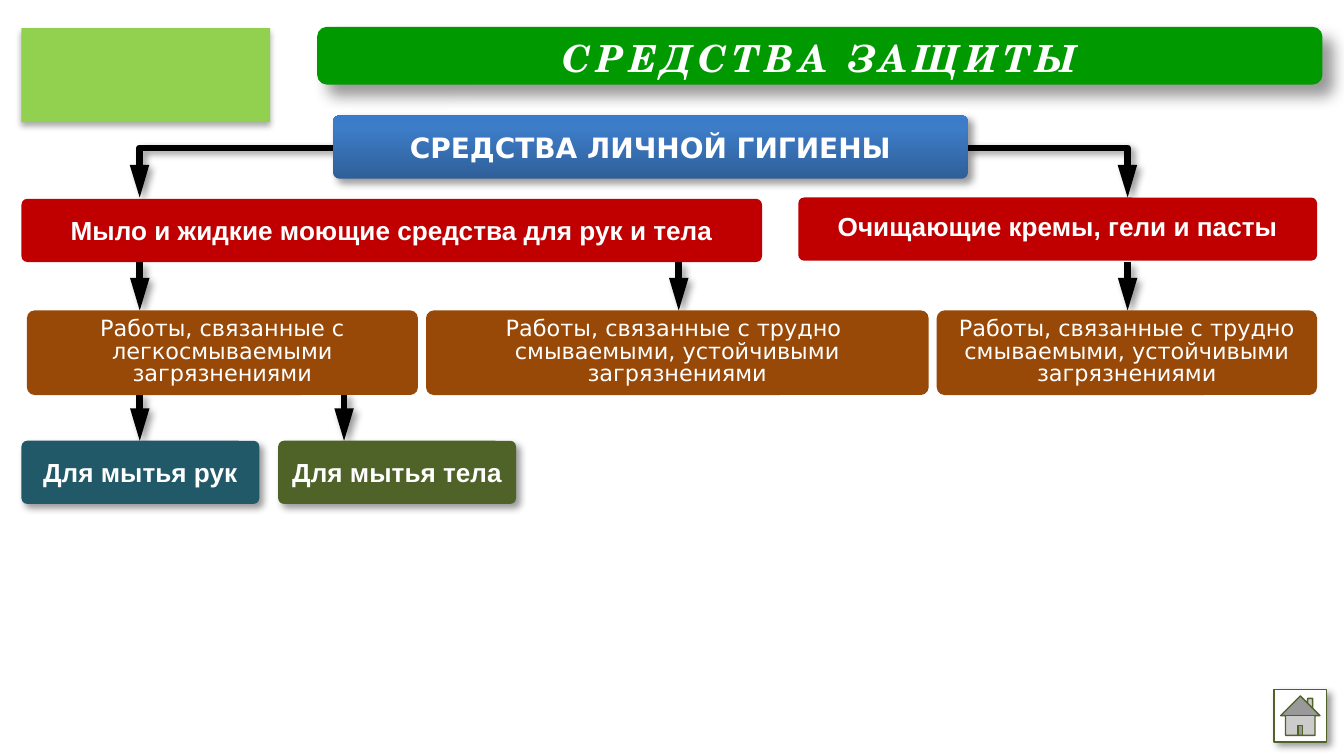
from copy import deepcopy

from lxml.etree import SubElement
from pptx import Presentation
from pptx.dml.color import RGBColor
from pptx.enum.shapes import MSO_CONNECTOR, MSO_SHAPE
from pptx.enum.text import MSO_ANCHOR, PP_ALIGN
from pptx.oxml.ns import qn
from pptx.util import Inches, Pt

COLORS = {
    "black": "000000",
    "white": "FFFFFF",
    "title": "009900",
    "accent": "92D050",
    "group": "C00000",
    "work": "984807",
    "hands": "215968",
    "body": "4F6228",
}
HEADER_GRADIENT = [(0, "2F5F99"), (0.8, "3D7CC7"), (1, "3A7CCB")]

# Shadows: blur and distance in points, angle in degrees, opacity in percent
SOFT = (4, 3, 45, 40)
DEEP = (8, 8, 45, 40)
LOW = (3.5, 2.2, 90, 32)


class SlideBuilder:
    """Holds the slide and draws its elements in one style."""

    def __init__(self, slide):
        self.slide = slide

    def color(self, name):
        return RGBColor.from_string(COLORS[name])

    def add_shadow(self, effects, blur, distance, angle, opacity):
        shadow = SubElement(effects, qn("a:outerShdw"), blurRad=str(Pt(blur)),
                            dist=str(Pt(distance)), dir=str(angle * 60000),
                            algn="tl", rotWithShape="0")
        color = SubElement(shadow, qn("a:srgbClr"), val=COLORS["black"])
        SubElement(color, qn("a:alpha"), val=str(opacity * 1000))

    def arrow(self, start, end, bend=None):
        kind = MSO_CONNECTOR.ELBOW if bend else MSO_CONNECTOR.STRAIGHT
        points = [Inches(value) for value in (*start, *end)]
        connector = self.slide.shapes.add_connector(kind, *points)
        connector.line.width = Pt(3.5)
        connector.line.color.rgb = self.color("black")
        properties = connector._element.spPr
        line = properties.find(qn("a:ln"))
        SubElement(line, qn("a:tailEnd"), type="triangle", w="med", len="lg")
        self.add_shadow(SubElement(properties, qn("a:effectLst")), *SOFT)
        if bend:
            guides = properties.find(qn("a:prstGeom")).get_or_add_avLst()
            SubElement(guides, qn("a:gd"), name="adj1", fmla=f"val {bend}")

    def shape(self, kind, box, fill, shadow=None, outline=None):
        shape = self.slide.shapes.add_shape(kind, *[Inches(value) for value in box])
        shape.shadow.inherit = False
        if shadow:
            effects = shape._element.spPr.find(qn("a:effectLst"))
            self.add_shadow(effects, *shadow)
        shape.fill.solid()
        shape.fill.fore_color.rgb = self.color(fill)
        if outline:
            shape.line.color.rgb = self.color(outline)
            shape.line.width = Pt(0.75)
        else:
            shape.line.fill.background()
        return shape

    def gradient(self, shape, stops):
        shape.fill.gradient()
        shape.fill.gradient_angle = 90
        stop_list = shape._element.spPr.find(qn("a:gradFill")).find(qn("a:gsLst"))
        stop_list.append(deepcopy(stop_list[-1]))
        for stop, (position, color) in zip(shape.fill.gradient_stops, stops):
            stop.position = position
            stop.color.rgb = RGBColor.from_string(color)

    def label(self, box, text, fill, size=14, font="Arial", bold=True, italic=False,
              spacing=None, rounding=0.092, insets=(0.04, 0.04, 0.04),
              tracking=None, shadow=None):
        shape = self.shape(MSO_SHAPE.ROUNDED_RECTANGLE, box, fill, shadow)
        shape.adjustments[0] = rounding
        text_frame = shape.text_frame
        text_frame.word_wrap = True
        text_frame.vertical_anchor = MSO_ANCHOR.MIDDLE
        side, top, bottom = [Inches(value) for value in insets]
        text_frame.margin_left = text_frame.margin_right = side
        text_frame.margin_top, text_frame.margin_bottom = top, bottom
        paragraph = text_frame.paragraphs[0]
        paragraph.text = text
        paragraph.alignment = PP_ALIGN.CENTER
        if spacing:
            paragraph.line_spacing = Pt(spacing)
        for run in paragraph.runs:
            run.font.name = font
            run.font.size = Pt(size)
            run.font.bold = bold
            run.font.italic = italic
            run.font.color.rgb = self.color("white")
            if tracking:
                run._r.get_or_add_rPr().set("spc", str(tracking * 100))
        return shape


def main():
    # Widescreen slide, 16:9
    presentation = Presentation()
    presentation.slide_width = Inches(10)
    presentation.slide_height = Inches(10 * 9 / 16)
    slide = presentation.slides.add_slide(presentation.slide_layouts[6])
    builder = SlideBuilder(slide)

    # Arrows between the levels
    left_x, right_x = 1.04, 8.39
    group_y, work_y, purpose_y = 1.47, 2.31, 3.28
    for x in (5.05, left_x, right_x):
        builder.arrow((x, 1.95), (x, work_y))
    for x in (left_x, 2.56):
        builder.arrow((x, 2.93), (x, purpose_y))
    builder.arrow((7.2, 1.1), (right_x, group_y), bend=99900)
    builder.arrow((2.48, 1.1), (left_x, group_y), bend=100100)

    # Top of the chart
    header = builder.label((2.48, 0.86, 4.72, 0.47), "СРЕДСТВА ЛИЧНОЙ ГИГИЕНЫ",
                           "group", size=15, font="DejaVu Sans",
                           insets=(0.04, 0.05, 0.05), shadow=SOFT)
    builder.gradient(header, HEADER_GRADIENT)

    # Kinds of work
    works = [
        (3.17, 3.74, "Работы, связанные с трудно \nсмываемыми, устойчивыми загрязнениями"),
        (0.2, 2.91, "Работы, связанные с легкосмываемыми загрязнениями"),
        (6.97, 2.83, "Работы, связанные с трудно смываемыми, устойчивыми загрязнениями"),
    ]
    for left, width, text in works:
        builder.label((left, work_y, width, 0.63), text, "work", size=12,
                      font="DejaVu Sans", bold=False, spacing=12)

    # Product groups
    builder.label((0.16, 1.48, 5.51, 0.47),
                  "Мыло и жидкие моющие средства для рук и тела", "group")
    builder.label((5.94, group_y, 3.86, 0.47),
                  "Очищающие кремы, гели и пасты", "group", spacing=14)

    # Purposes
    purposes = [(2.07, "Для мытья тела", "body"), (0.16, "Для мытья рук", "hands")]
    for left, text, fill in purposes:
        builder.label((left, purpose_y, 1.77, 0.47), text, fill, shadow=SOFT)

    # Title, home button and corner block
    builder.label((2.36, 0.2, 7.48, 0.43), "СРЕДСТВА ЗАЩИТЫ", "title", size=20,
                  font="TeX Gyre Schola", italic=True, rounding=0.167,
                  insets=(0.1, 0.08, 0.05), tracking=3, shadow=DEEP)
    builder.shape(MSO_SHAPE.ACTION_BUTTON_HOME, (9.48, 5.13, 0.39, 0.39), "white",
                  shadow=SOFT, outline="body")
    builder.shape(MSO_SHAPE.RECTANGLE, (0.16, 0.21, 1.85, 0.7), "accent", shadow=LOW)

    presentation.save("out.pptx")


if __name__ == "__main__":
    main()
